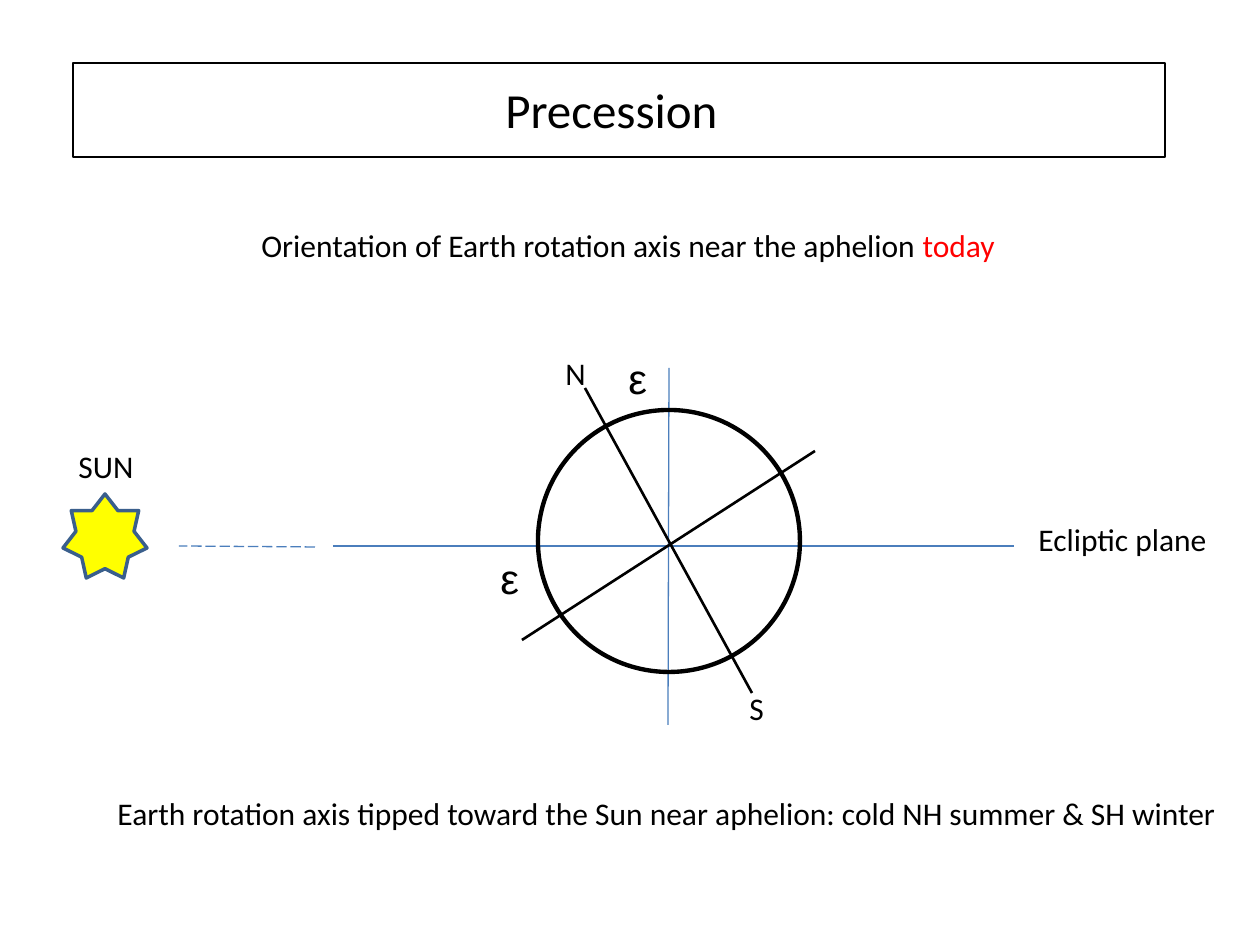
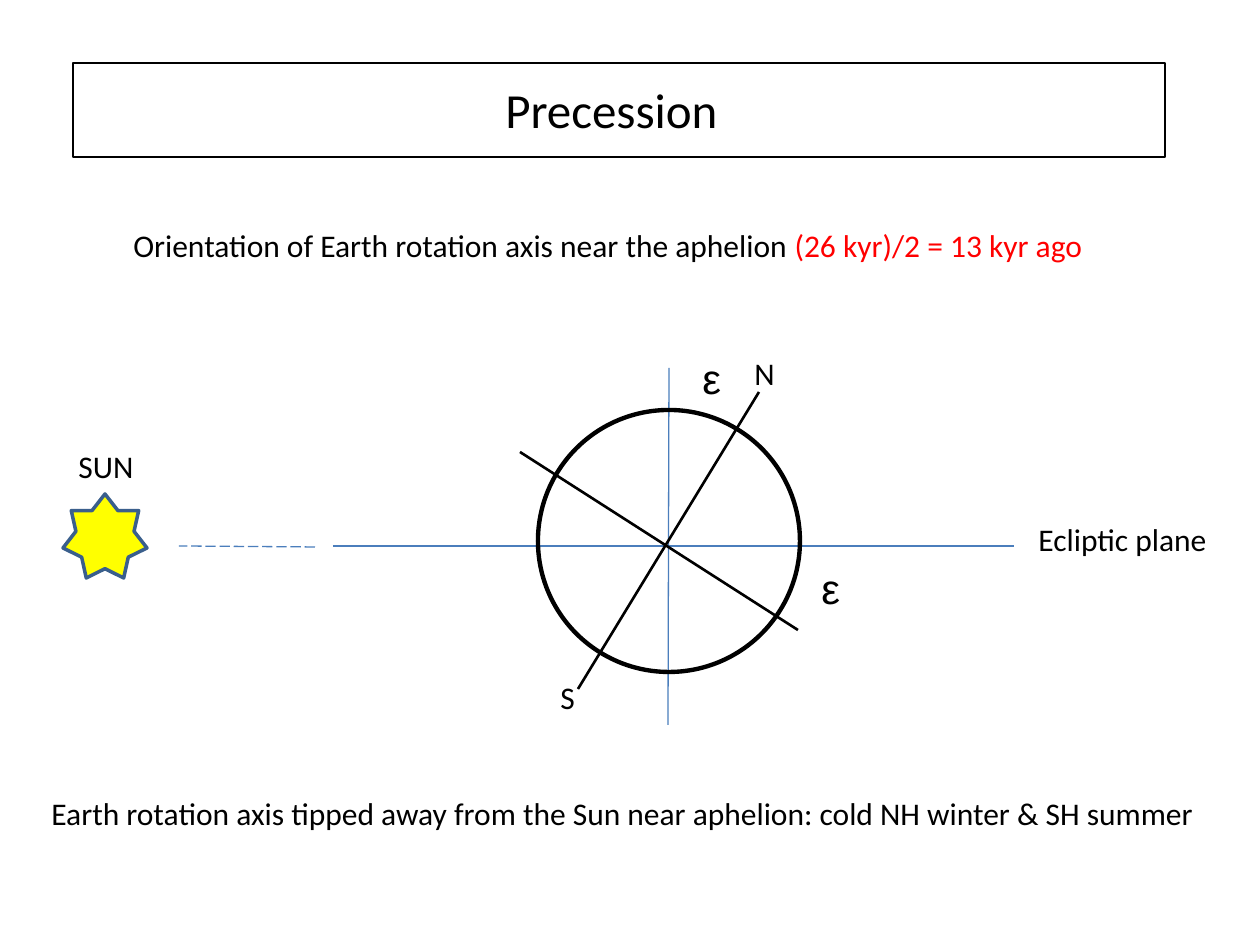
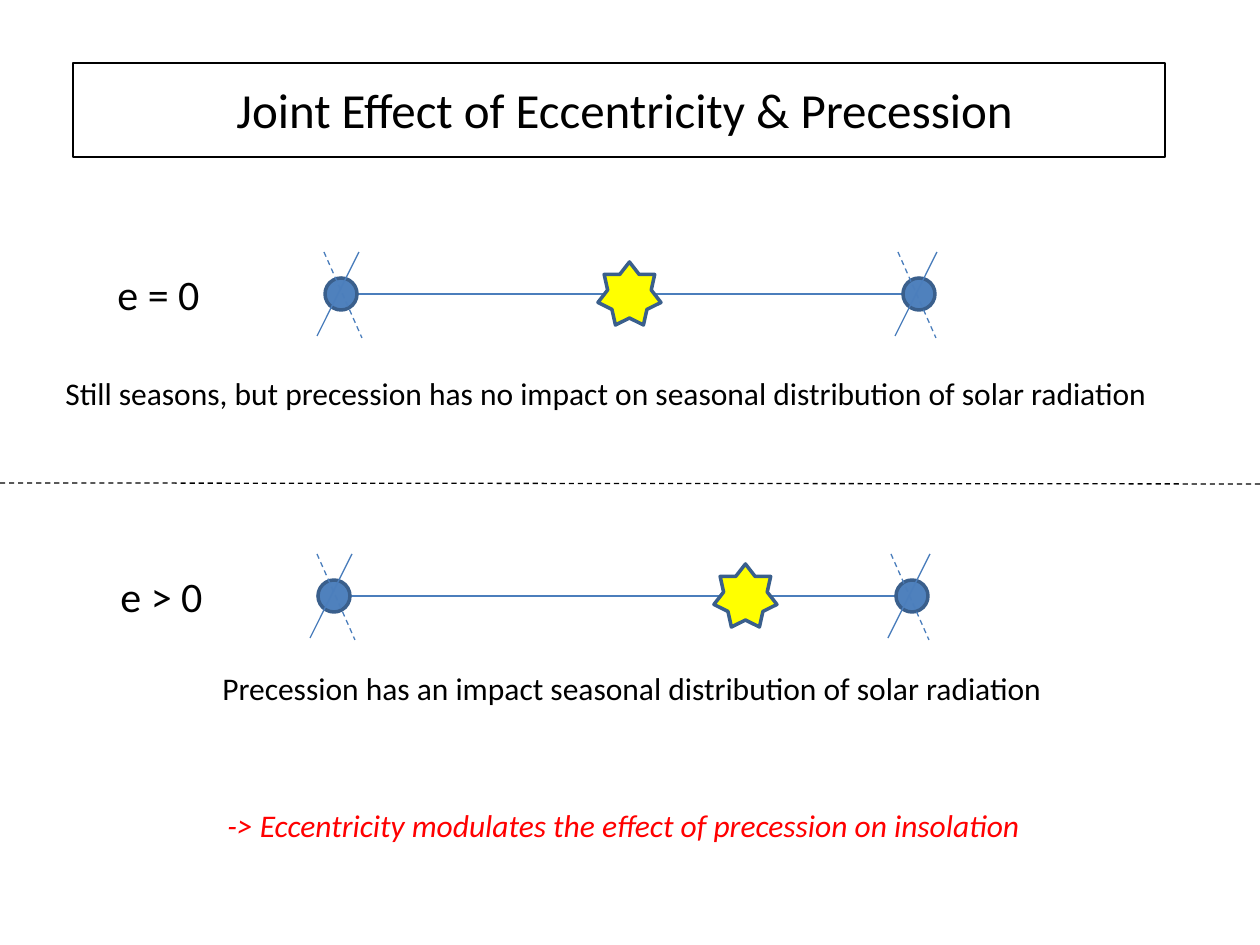
from lxml.etree import SubElement
from pptx import Presentation
from pptx.dml.color import RGBColor
from pptx.enum.dml import MSO_LINE
from pptx.enum.shapes import MSO_CONNECTOR, MSO_SHAPE
from pptx.enum.text import MSO_AUTO_SIZE
from pptx.oxml.ns import qn
from pptx.util import Emu, Pt

COLORS = {
    "ink": "000000",
    "accent": "FF0000",
    "orbit": "4B7EBC",
    "planet": "4F81BD",
    "outline": "3A5F8C",
    "sun": "FFFF00",
}
TEXT_HEIGHTS = {18: 50, 24: 63, 28: 72}


def px(length):
    """Turn whole pixels (126 to the inch) into EMU."""
    return Emu(round(length * 914400 / 126))


def rgb(color):
    """Look up a named colour."""
    return RGBColor.from_string(COLORS[color])


class Deck:
    """Holds the shared style and the current slide."""

    def __init__(self):
        """Start an empty 4:3 presentation."""
        self.presentation = Presentation()
        self.presentation.slide_width = px(1260)
        self.presentation.slide_height = px(945)
        self.slide = None

    def start_slide(self, title, left, width):
        """Add a blank slide with a framed title."""
        self.slide = self.presentation.slides.add_slide(self.presentation.slide_layouts[6])
        self.shape(MSO_SHAPE.RECTANGLE, 73, 63, 1092, 94, line="ink", weight=1)
        self.text(title, left, 73, width, size=28)

    def shape(self, kind, left, top, width, height, fill=None, line="outline", weight=2):
        """Add an outlined preset shape."""
        figure = self.slide.shapes.add_shape(kind, px(left), px(top), px(width), px(height))
        figure.shadow.inherit = False
        if fill:
            figure.fill.solid()
            figure.fill.fore_color.rgb = rgb(fill)
        else:
            figure.fill.background()
        figure.line.color.rgb = rgb(line)
        figure.line.width = Pt(weight)

    def sun(self, left, top, size):
        """Add a yellow seven-pointed sun."""
        self.shape(MSO_SHAPE.STAR_7_POINT, left, top, size, size, fill="sun")

    def text(self, wording, left, top, width, size=18, font="Calibri",
             color="ink", italic=False, highlight=None):
        """Add one line of text, with an optional highlighted ending."""
        box = self.slide.shapes.add_textbox(px(left), px(top), px(width), px(TEXT_HEIGHTS[size]))
        frame = box.text_frame
        frame.word_wrap = False
        frame.auto_size = MSO_AUTO_SIZE.SHAPE_TO_FIT_TEXT
        frame.text = wording
        paragraph = frame.paragraphs[0]
        if highlight:
            paragraph.add_run().text = highlight
        for run, run_color in zip(paragraph.runs, (color, "accent")):
            run.font.name = font
            run.font.size = Pt(size)
            run.font.italic = italic
            run.font.color.rgb = rgb(run_color)

    def line(self, start, end, color="orbit", weight=0.75, dash=None):
        """Add a straight line between two points."""
        connector = self.slide.shapes.add_connector(
            MSO_CONNECTOR.STRAIGHT, *(px(value) for value in (*start, *end)))
        connector.line.color.rgb = rgb(color)
        connector.line.width = Pt(weight)
        if dash:
            connector.line.dash_style = dash
        SubElement(connector._element.spPr, qn("a:effectLst"))

    def precession(self, epoch, caption_box, conclusion, conclusion_box,
                   axis, equator, epsilons, north, south):
        """Add a slide with the tilted Earth near the aphelion."""
        self.start_slide("Precession", 493, 239)
        self.line((668, 725), (669, 368))
        self.line((333, 546), (1014, 546))
        self.text("Ecliptic plane", 1026, 514, 203)
        self.shape(MSO_SHAPE.OVAL, 538, 410, 262, 262, line="ink", weight=2.5)
        for ends in (axis, equator):
            self.line(*ends, color="ink", weight=1.5)
        for left, top in epsilons:
            self.text("ε", left, top, 44, size=24, font="Arial")
        self.text("N", *north, 45)
        self.text("S", *south, 40)
        self.sun(63, 494, 84)
        self.line((315, 547), (179, 546), dash=MSO_LINE.LONG_DASH)
        self.text("SUN", 66, 441, 81)
        caption_left, caption_width = caption_box
        self.text("Orientation of Earth rotation axis near the aphelion ",
                  caption_left, 220, caption_width, highlight=epoch)
        conclusion_left, conclusion_width = conclusion_box
        self.text(conclusion, conclusion_left, 788, conclusion_width)

    def orbit(self, label, label_left, aphelion, sun_left, middle):
        """Add a sun between two positions of the tilted Earth."""
        perihelion = aphelion + 578
        self.line((aphelion - 5, middle), (perihelion + 5, middle))
        self.text(label, label_left, middle - 32, 108, size=24)
        self.sun(sun_left, middle - 32, 63)
        for center, dashed_top in ((aphelion, aphelion - 17), (perihelion, perihelion - 21)):
            self.shape(MSO_SHAPE.OVAL, center - 16, middle - 16, 32, 32, fill="planet")
            self.line((center + 18, middle - 42), (center - 24, middle + 42))
            self.line((dashed_top, middle - 42), (dashed_top + 38, middle + 44),
                      dash=MSO_LINE.DASH)


def main():
    """Build and save the three slides."""
    deck = Deck()
    deck.precession(
        "today", (249, 760),
        "Earth rotation axis tipped toward the Sun near aphelion: cold NH summer & SH winter",
        (105, 1138),
        axis=((585, 388), (752, 693)), equator=((815, 451), (522, 640)),
        epsilons=((616, 346), (488, 546)), north=(553, 348), south=(737, 683))
    deck.precession(
        "(26 kyr)/2 = 13 kyr ago", (121, 1018),
        "Earth rotation axis tipped away from the Sun near aphelion: cold NH winter & SH summer",
        (39, 1182),
        axis=((759, 392), (578, 689)), equator=((798, 630), (520, 452)),
        epsilons=((690, 346), (809, 556)), north=(742, 348), south=(548, 672))

    deck.start_slide("Joint Effect of Eccentricity & Precession", 224, 811)
    deck.orbit("e = 0", 105, 341, 598, 294)
    deck.orbit("e > 0", 108, 334, 714, 596)
    deck.text("-> Eccentricity modulates the effect of precession on insolation",
              215, 800, 830, color="accent", italic=True)
    deck.text("Still seasons, but precession has no impact on seasonal distribution "
              "of solar radiation", 53, 368, 1153)
    deck.line((0, 483), (1260, 484), color="ink", dash=MSO_LINE.DASH)
    deck.text("Precession has an impact seasonal distribution of solar radiation",
              210, 663, 854)
    deck.presentation.save("out.pptx")


if __name__ == "__main__":
    main()
